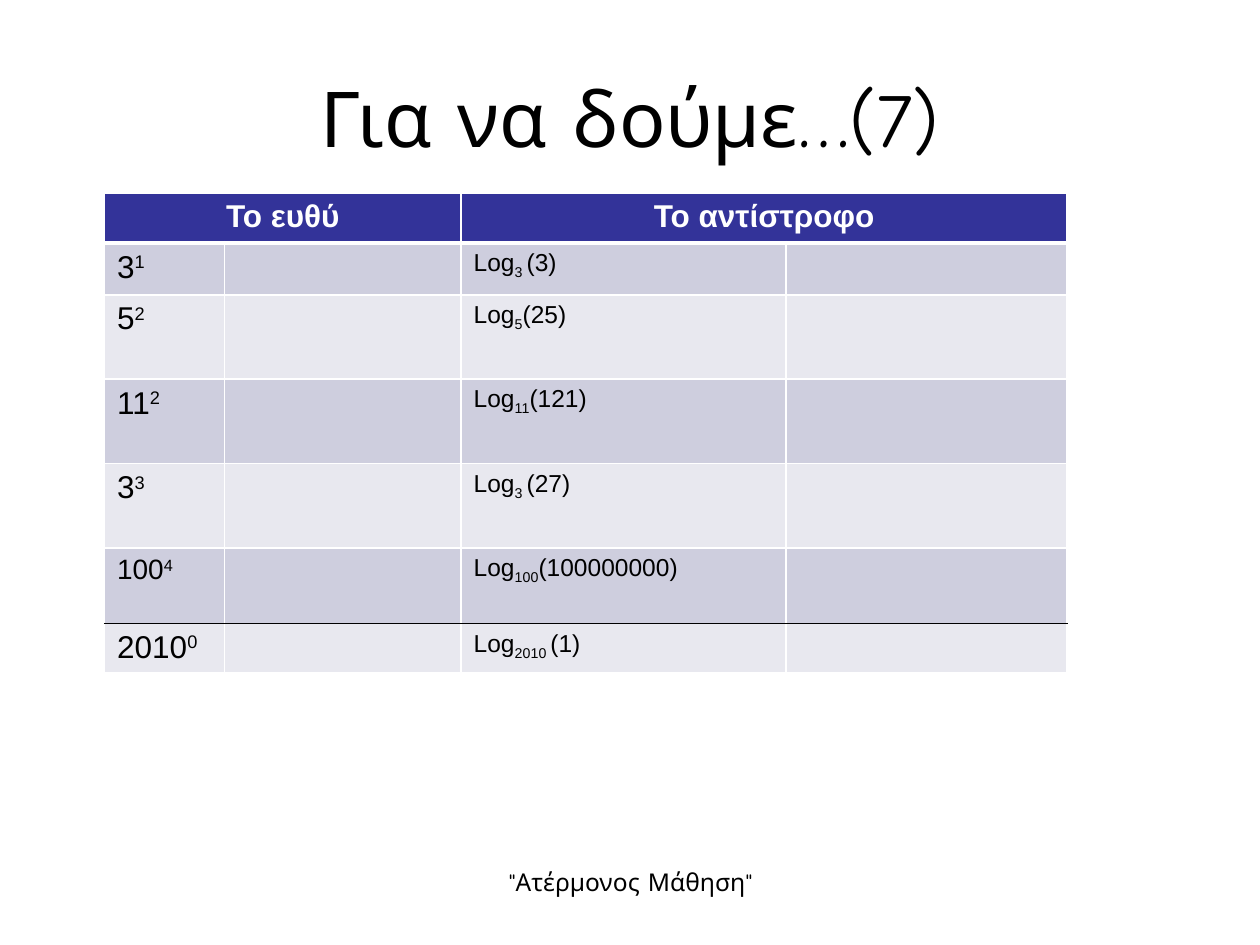
from lxml import etree
from pptx import Presentation
from pptx.dml.color import RGBColor
from pptx.enum import text
from pptx.oxml import ns
from pptx.util import Inches, Pt

BLACK = RGBColor(0, 0, 0)
WHITE = RGBColor(255, 255, 255)
NAVY = RGBColor(0x33, 0x33, 0x99)
DARK = RGBColor(0xCE, 0xCE, 0xDE)
LIGHT = RGBColor(0xE8, 0xE8, 0xEF)
CENTER = text.PP_ALIGN.CENTER


def add_run(para, words, size, color=BLACK, face="Arial", shift=0):
    """Add a run; shift is the baseline offset in percent."""
    run = para.add_run()
    run.text = words
    run.font.size = Pt(size)
    run.font.name = face
    run.font.color.rgb = color
    if shift:
        run.font._element.set("baseline", str(shift * 1000))
    return run


def style_cell(cell, fill, top=(WHITE, 1), base=(WHITE, 1)):
    """Set fill and borders; top and base are (color, points)."""
    props = cell._tc.get_or_add_tcPr()
    edges = {"lnL": (WHITE, 1), "lnR": (WHITE, 1), "lnT": top, "lnB": base}
    for tag, (color, width) in edges.items():
        line = etree.SubElement(props, ns.qn("a:" + tag), w=str(Pt(width)))
        solid = etree.SubElement(line, ns.qn("a:solidFill"))
        etree.SubElement(solid, ns.qn("a:srgbClr"), val=str(color))
    cell.fill.solid()
    cell.fill.fore_color.rgb = fill


prs = Presentation()
prs.slide_width = Inches(10)
prs.slide_height = Inches(7.5)
slide = prs.slides.add_slide(prs.slide_layouts[5])

title = slide.shapes.title
title.left, title.top = Inches(0.5), Inches(0.3)
title.width, title.height = Inches(9), Inches(1.25)
title.text_frame.vertical_anchor = text.MSO_ANCHOR.MIDDLE
para = title.text_frame.paragraphs[0]
para.alignment = CENTER
add_run(para, "Για να δούμε…(7)", 44, face="Comic Neue")

# base, exponent, size of the power, log base, log argument
powers = [
    ("3", "1", 18, "3 ", "(3)"),
    ("5", "2", 18, "5", "(25)"),
    ("11", "2", 18, "11", "(121)"),
    ("3", "3", 18, "3 ", "(27)"),
    ("100", "4", 16, "100", "(100000000)"),
    ("2010", "0", 18, "2010 ", "(1)"),
]
widths = [0.95, 1.88, 2.58, 2.23]
heights = [0.4, 0.41, 0.67, 0.67, 0.67, 0.6, 0.39]

table = slide.shapes.add_table(
    len(heights), len(widths), Inches(0.83), Inches(1.53),
    Inches(sum(widths)), Inches(sum(heights))).table
for col, width in zip(table.columns, widths):
    col.width = Inches(width)
for row, height in zip(table.rows, heights):
    row.height = Inches(height)

for col in range(len(widths)):
    style_cell(table.cell(0, col), NAVY, base=(WHITE, 3))
for col, head in ((0, "Το ευθύ"), (2, "Το αντίστροφο")):
    cell = table.cell(0, col)
    cell.merge(table.cell(0, col + 1))
    para = cell.text_frame.paragraphs[0]
    para.alignment = CENTER
    add_run(para, head, 18, WHITE).font.bold = True

last = len(powers)
for row, (num, exp, size, base, arg) in enumerate(powers, 1):
    top = (WHITE, 3) if row == 1 else (BLACK if row == last else WHITE, 1)
    low = (BLACK if row == last - 1 else WHITE, 1)
    for col in range(len(widths)):
        cell = table.cell(row, col)
        style_cell(cell, DARK if row % 2 else LIGHT, top, low)
        cell.text_frame.paragraphs[0].font.size = Pt(14)
    para = table.cell(row, 0).text_frame.paragraphs[0]
    add_run(para, num, size)
    add_run(para, exp, size, shift=30)
    para = table.cell(row, 2).text_frame.paragraphs[0]
    add_run(para, "Log", 14)
    add_run(para, base, 14, shift=-25)
    add_run(para, arg, 14)

foot = slide.shapes.add_textbox(
    Inches(3.42), Inches(6.83), Inches(3.17), Inches(0.52)).text_frame
foot.word_wrap = True
para = foot.paragraphs[0]
para.alignment = CENTER
add_run(para, '"Ατέρμονος Μάθηση"', 14, face="Comic Neue")

prs.save("out.pptx")
